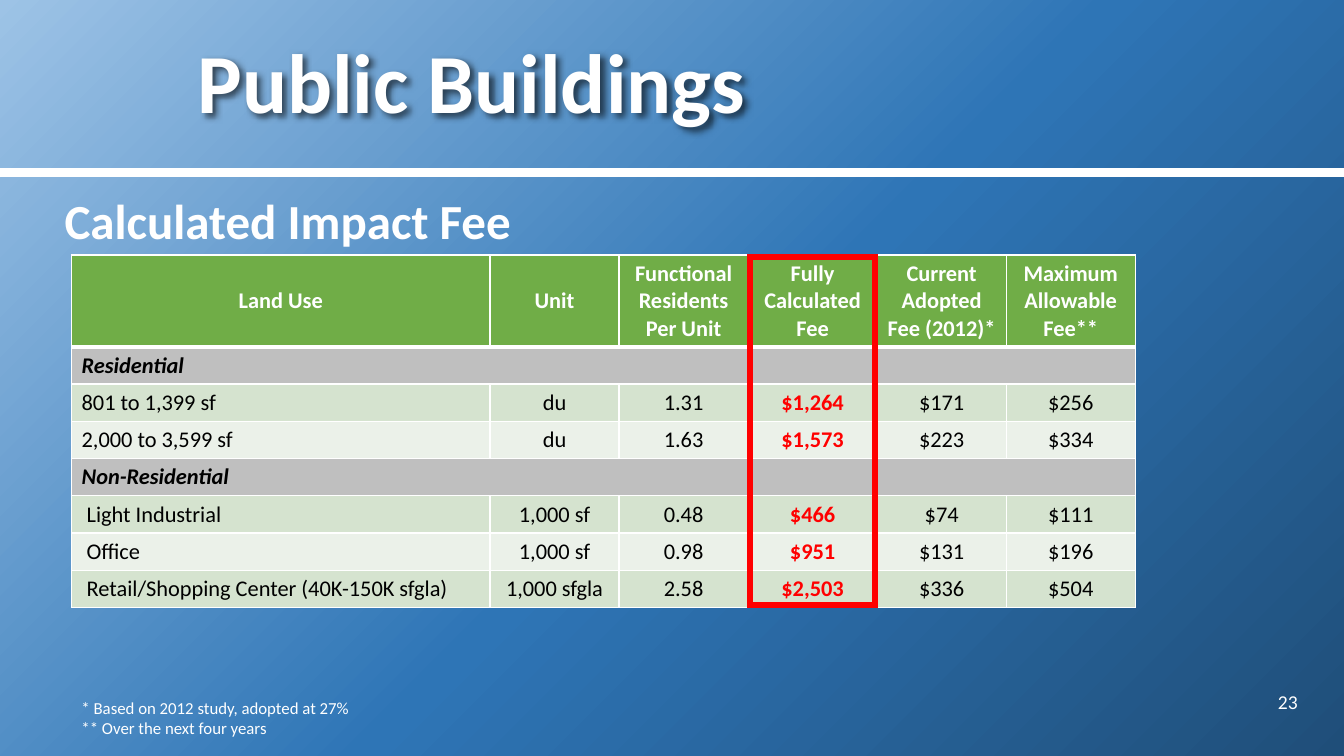
"""Build the Public Buildings impact fee slide."""
import pptx
import pptx.dml.color
import pptx.enum.shapes
import pptx.enum.text
import pptx.oxml
import pptx.oxml.ns
import pptx.util
from pptx.util import Inches

RGBColor = pptx.dml.color.RGBColor
WHITE = RGBColor(0xFF, 0xFF, 0xFF)
BLACK = RGBColor(0, 0, 0)
RED = RGBColor(0xFF, 0, 0)
GREEN = RGBColor(0x70, 0xAD, 0x47)
GREY = RGBColor(0xBF, 0xBF, 0xBF)
BAND_DARK = RGBColor(0xD5, 0xE3, 0xCF)
BAND_LIGHT = RGBColor(0xEB, 0xF1, 0xE9)
SKY = RGBColor(0x9D, 0xC3, 0xE6)
BLUE = RGBColor(0x2E, 0x75, 0xB6)
NAVY = RGBColor(0x1F, 0x4E, 0x79)

ALIGN = pptx.enum.text.PP_ALIGN
MIDDLE = pptx.enum.text.MSO_ANCHOR.MIDDLE
FEE_COLUMN = 3
COLUMN_WIDTHS = [4.15] + [1.28] * 5
ROWS = [
    ["Land Use", "Unit", "Functional Residents Per Unit", "Fully Calculated Fee",
     "Current Adopted Fee (2012)*", "Maximum Allowable Fee**"],
    ["Residential"],
    ["801 to 1,399 sf", "du", "1.31", "$1,264", "$171", "$256"],
    ["2,000 to 3,599 sf", "du", "1.63", "$1,573", "$223", "$334"],
    ["Non-Residential"],
    [" Light Industrial", "1,000 sf", "0.48", "$466", "$74", "$111"],
    [" Office", "1,000 sf", "0.98", "$951", "$131", "$196"],
    [" Retail/Shopping Center (40K-150K sfgla)", "1,000 sfgla", "2.58", "$2,503", "$336", "$504"],
]


def parse_drawing(tag, content, attributes=""):
    namespace = pptx.oxml.ns.nsdecls("a")
    return pptx.oxml.parse_xml(f"<a:{tag} {namespace} {attributes}>{content}</a:{tag}>")


def write_text(frame, text, *, size, color=WHITE, bold=False, italic=False,
               align=ALIGN.LEFT, line_spacing=None, bullet=True):
    frame.text = text
    frame.word_wrap = True
    for paragraph in frame.paragraphs:
        if not bullet:
            properties = paragraph._p.get_or_add_pPr()
            properties.set("marL", "0")
            properties.set("indent", "0")
            properties.append(parse_drawing("buNone", ""))
        paragraph.alignment = align
        paragraph.space_before = pptx.util.Pt(0)
        if line_spacing:
            paragraph.line_spacing = line_spacing
        for run in paragraph.runs:
            font = run.font
            font.name = "Calibri"
            font.size = pptx.util.Pt(size)
            font.color.rgb = color
            font.bold = bold
            font.italic = italic


class FeeSlide:
    def __init__(self, presentation):
        self.slide = presentation.slides.add_slide(presentation.slide_layouts[1])
        self.shapes = self.slide.shapes

    def background(self, stops):
        self.slide.background.fill.solid()
        holder = self.slide.element.find(".//" + pptx.oxml.ns.qn("p:bgPr"))
        marks = "".join(f'<a:gs pos="{position * 1000}"><a:srgbClr val="{color}"/></a:gs>'
                        for position, color in stops)
        holder.replace(holder[0], parse_drawing(
            "gradFill", f'<a:gsLst>{marks}</a:gsLst><a:path path="circle">'
            '<a:fillToRect r="100000" b="100000"/></a:path>'))

    def place(self, shape, box):
        shape.left, shape.top, shape.width, shape.height = map(Inches, box)

    def title(self, text, box):
        shape = self.shapes.title
        self.place(shape, box)
        write_text(shape.text_frame, text, size=60, bold=True, line_spacing=0.9)
        shape.text_frame.vertical_anchor = MIDDLE
        shape._element.spPr.append(parse_drawing(
            "effectLst", '<a:outerShdw blurRad="50800" dist="38100" dir="2700000">'
            '<a:srgbClr val="000000"><a:alpha val="60000"/></a:srgbClr></a:outerShdw>'))

    def body(self, text, box):
        shape = self.slide.placeholders[1]
        self.place(shape, box)
        write_text(shape.text_frame, text, size=35, bold=True, line_spacing=1.2, bullet=False)
        shape.text_frame.auto_size = pptx.enum.text.MSO_AUTO_SIZE.NONE
        shape.text_frame.margin_top = Inches(0.03)

    def text_box(self, text, box, anchor=pptx.enum.text.MSO_ANCHOR.TOP, **style):
        frame = self.shapes.add_textbox(*map(Inches, box)).text_frame
        write_text(frame, text, **style)
        frame.vertical_anchor = anchor

    def rule(self, left, right, top, width):
        line = self.shapes.add_connector(pptx.enum.shapes.MSO_CONNECTOR.STRAIGHT,
                                         *map(Inches, (left, top, right, top)))
        line.line.color.rgb = WHITE
        line.line.width = pptx.util.Pt(width)
        line._element.spPr.append(parse_drawing("effectLst", ""))

    def frame(self, box, color, width):
        shape = self.shapes.add_shape(pptx.enum.shapes.MSO_SHAPE.RECTANGLE, *map(Inches, box))
        shape.shadow.inherit = False
        shape.fill.background()
        shape.line.color.rgb = color
        shape.line.width = pptx.util.Pt(width)
        shape.line._ln.append(parse_drawing("miter", "", 'lim="800000"'))

    def cell(self, cell, fill, top=1, bottom=1):
        cell.vertical_anchor = MIDDLE
        properties = cell._tc.get_or_add_tcPr()
        for side, width in zip("LRTB", (1, 1, top, bottom)):
            properties.append(parse_drawing(
                f"ln{side}", f'<a:solidFill><a:srgbClr val="{WHITE}"/></a:solidFill>',
                f'w="{pptx.util.Pt(width)}"'))
        cell.fill.solid()
        cell.fill.fore_color.rgb = fill

    def table(self, rows, widths, left, top, header_height, row_height):
        height = header_height + row_height * (len(rows) - 1)
        table = self.shapes.add_table(len(rows), len(widths), *map(
            Inches, (left, top, sum(widths), height))).table
        table.horz_banding = False
        for column, width in zip(table.columns, widths):
            column.width = Inches(width)
        band = 0
        for index, values in enumerate(rows):
            header, section = index == 0, len(values) == 1
            table.rows[index].height = Inches(header_height if header else row_height)
            if header:
                fill = GREEN
            elif section:
                fill, band = GREY, 0
            else:
                fill, band = (BAND_LIGHT if band else BAND_DARK), 1 - band
            for number in range(len(widths)):
                self.cell(table.cell(index, number), fill,
                          top=3 if index == 1 else 1, bottom=3 if header else 1)
            if section:
                table.cell(index, 0).merge(table.cell(index, len(widths) - 1))
            for number, value in enumerate(values):
                fee = number == FEE_COLUMN
                write_text(table.cell(index, number).text_frame, value, size=16,
                           color=WHITE if header else RED if fee else BLACK,
                           bold=header or section or fee, italic=section,
                           align=ALIGN.CENTER if header or number else ALIGN.LEFT)


def main():
    presentation = pptx.Presentation()
    presentation.slide_width = Inches(13.33)
    presentation.slide_height = Inches(7.5)
    page = FeeSlide(presentation)
    page.background([(0, SKY), (53, BLUE), (100, NAVY)])
    page.rule(-0.02, 13.33, 1.71, 6)
    page.title("Public Buildings", (1.86, 0, 11.1, 1.71))
    page.body("Calculated Impact Fee", (0.54, 1.74, 12.42, 5.27))
    page.text_box("23", (12.08, 6.76, 0.89, 0.4), MIDDLE, size=14, align=ALIGN.RIGHT)
    page.table(ROWS, COLUMN_WIDTHS, 0.71, 2.53, 0.91, 0.37)
    page.frame((7.44, 2.55, 1.24, 3.45), RED, 4)
    page.text_box("* Based on 2012 study, adopted at 27%\n** Over the next four years",
                  (0.71, 6.87, 10.98, 0.5), size=12)
    presentation.save("out.pptx")


if __name__ == "__main__":
    main()
